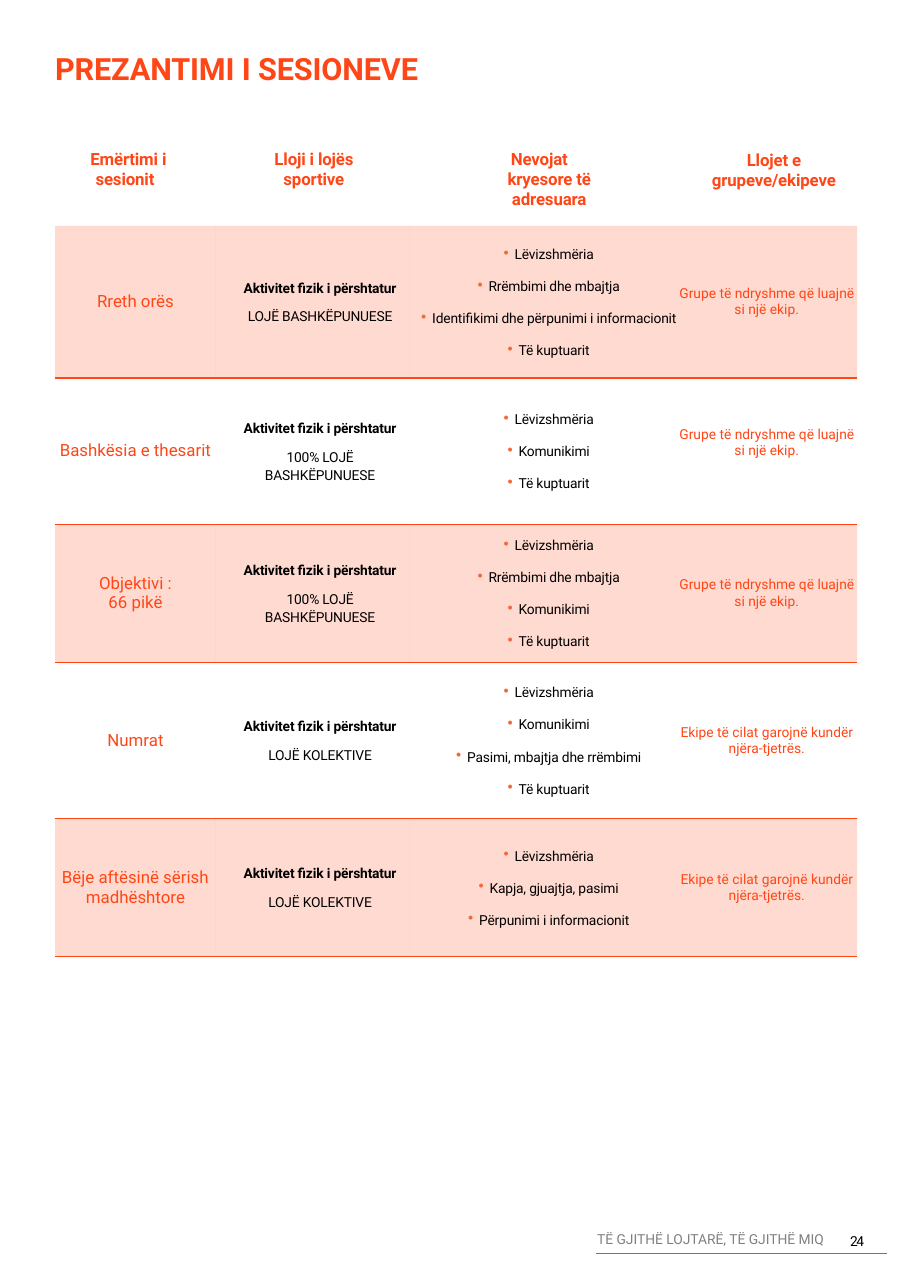
from lxml.etree import SubElement
from pptx import Presentation
from pptx.dml.color import RGBColor
from pptx.enum.shapes import MSO_CONNECTOR
from pptx.enum.text import MSO_ANCHOR, MSO_AUTO_SIZE, PP_ALIGN
from pptx.oxml import parse_xml
from pptx.oxml.ns import nsdecls, qn
from pptx.util import Inches, Pt

HEX = {"orange": "FF4616", "bullet": "F26A36", "rule": "FA4616",
       "gray": "808080", "black": "000000"}
NO_GRID = "{2D5ABB26-0587-4C30-8999-92F81FD0307C}"
MID, LEFT = PP_ALIGN.CENTER, PP_ALIGN.LEFT


def style(size, color, bold=False, align=MID, before=0, lines=None,
          indent=(0, 0), track=0, dot=False):
    """Gather format values; track is in hundredths of a point."""
    return {"color": color, "indent": indent, "track": track, "dot": dot,
            "font": {"name": "Roboto", "size": Pt(size), "bold": bold},
            "para": {"alignment": align, "space_before": Pt(before),
                     "line_spacing": lines}}


def header(*indent):
    return style(11, "orange", True, before=1, indent=indent, track=-10)


TITLE = style(20, "orange", True, LEFT, 1, track=-10)
NAME = style(11, "orange")
GROUP = style(9, "orange")
KIND = style(9, "black", True, MID, 7, 1.11, (0.13, 0), -10)
MODE = style(9, "black", False, MID, 7, 1.11, (0.13, 0), -10)
NEED = style(9, "black", False, MID, 9.2, 1.11, (0.2, -0.1), -10, True)
FOOT = style(9, "gray", align=LEFT, before=1.4)
PAGE = style(9, "black", track=-90)

HEADS = [
    ("Emërtimi i sesionit", (0.69, 1.34, 0.88, 0.38), header(0.01, 0.06)),
    ("Lloji i lojës sportive", (2.38, 1.34, 0.93, 0.38), header(0.01, 0)),
    ("Nevojat kryesore të adresuara", (4.33, 1.34, 1.12, 0.57),
     header(0.19, -0.18)),
    ("Llojet e grupeve/ekipeve", (6.42, 1.35, 1.21, 0.38), header(0, 0)),
]
WIDTHS = [1.46, 1.76, 2.42, 1.64]
HEIGHTS = [1.38, 1.33, 1.25, 1.42, 1.25]

ADAPTED = "Aktivitet fizik i përshtatur"
FULL = "100% LOJË BASHKËPUNUESE"
TEAM = "LOJË KOLEKTIVE"
MOVE, GRAB, TALK, GRASP = ("Lëvizshmëria", "Rrëmbimi dhe mbajtja",
                           "Komunikimi", "Të kuptuarit")
MIXED = "Grupe të ndryshme që luajnë si një ekip."
RIVAL = "Ekipe të cilat garojnë kundër njëra-tjetrës."
ROWS = [
    (["Rreth orës"], "LOJË BASHKËPUNUESE",
     [MOVE, GRAB, "Identifikimi dhe përpunimi i informacionit", GRASP], MIXED),
    (["Bashkësia e thesarit"], FULL, [MOVE, TALK, GRASP], MIXED),
    (["Objektivi :", "66 pikë"], FULL, [MOVE, GRAB, TALK, GRASP], MIXED),
    (["Numrat"], TEAM,
     [MOVE, TALK, "Pasimi, mbajtja dhe rrëmbimi", GRASP], RIVAL),
    (["Bëje aftësinë sërish madhështore"], TEAM,
     [MOVE, "Kapja, gjuajtja, pasimi", "Përpunimi i informacionit"], RIVAL),
]


def apply(item, values):
    for key, value in values.items():
        setattr(item, key, value)


def color(key):
    return RGBColor.from_string(HEX[key])


class Sheet:
    def __init__(self, slide):
        self.slide = slide

    def fill(self, frame, lines):
        """Fill a text frame with (text, style) paragraphs."""
        for i, (text, look) in enumerate(lines):
            para = frame.add_paragraph() if i else frame.paragraphs[0]
            run = para.add_run()
            run.text = text
            apply(para, look["para"])
            apply(run.font, look["font"])
            run.font.color.rgb = color(look["color"])
            run._r.get_or_add_rPr().set("spc", str(look["track"]))
            props = para._p.get_or_add_pPr()
            for key, size in zip(("marL", "indent"), look["indent"]):
                props.set(key, str(Inches(size)))
            if look["dot"]:
                tint = SubElement(props, qn("a:buClr"))
                SubElement(tint, qn("a:srgbClr"), val=HEX["bullet"])
                SubElement(props, qn("a:buSzPct"), val="111000")
                SubElement(props, qn("a:buChar"), char="•")

    def place(self, shape, text, box, look):
        for key, size in zip(("left", "top", "width", "height"), box):
            setattr(shape, key, Inches(size))
        apply(shape.text_frame, {
            "margin_left": 0, "margin_right": 0, "margin_bottom": 0,
            "margin_top": Inches(0.01), "word_wrap": True,
            "vertical_anchor": MSO_ANCHOR.TOP,
            "auto_size": MSO_AUTO_SIZE.SHAPE_TO_FIT_TEXT})
        self.fill(shape.text_frame, [(text, look)])

    def title(self, text, box):
        self.place(self.slide.shapes.title, text, box, TITLE)

    def label(self, text, box, look):
        self.place(self.slide.shapes.add_textbox(0, 0, 0, 0), text, box, look)

    def cell(self, cell, lines, shade):
        apply(cell, {"margin_left": 0, "margin_right": 0, "margin_top": 0,
                     "margin_bottom": 0, "vertical_anchor": MSO_ANCHOR.MIDDLE})
        self.fill(cell.text_frame, lines)
        props = cell._tc.get_or_add_tcPr()
        props.append(parse_xml(
            f'<a:lnB {nsdecls("a")} w="12700"><a:solidFill>'
            f'<a:srgbClr val="{HEX["orange"]}"/></a:solidFill></a:lnB>'))
        if shade:
            cell.fill.solid()
            cell.fill.fore_color.rgb = color("orange")
            tint = props.find(qn("a:solidFill") + "/" + qn("a:srgbClr"))
            SubElement(tint, qn("a:alpha"), val="20000")
        else:
            cell.fill.background()

    def table(self, left, top):
        grid = self.slide.shapes.add_table(
            len(ROWS), len(WIDTHS), Inches(left), Inches(top),
            Inches(sum(WIDTHS)), Inches(sum(HEIGHTS))).table
        apply(grid, {"first_row": False, "horz_banding": False})
        grid._tbl.tblPr.find(qn("a:tableStyleId")).text = NO_GRID
        for col, size in zip(grid.columns, WIDTHS):
            col.width = Inches(size)
        for i, (names, mode, needs, group) in enumerate(ROWS):
            grid.rows[i].height = Inches(HEIGHTS[i])
            parts = [[(name, NAME) for name in names],
                     [(ADAPTED, KIND), (mode, MODE)],
                     [(need, NEED) for need in needs],
                     [(group, GROUP)]]
            for j, lines in enumerate(parts):
                self.cell(grid.cell(i, j), lines, i % 2 == 0)
        return grid

    def line(self, left, right, top):
        rule = self.slide.shapes.add_connector(
            MSO_CONNECTOR.STRAIGHT, Inches(left), Inches(top),
            Inches(right), Inches(top))
        rule.line.color.rgb = color("rule")
        rule.line.width = Pt(0.75)
        SubElement(rule._element.spPr, qn("a:effectLst"))


def main():
    deck = Presentation()
    apply(deck, {"slide_width": Inches(8.26), "slide_height": Inches(11.69)})
    sheet = Sheet(deck.slides.add_slide(deck.slide_layouts[5]))
    sheet.title("PREZANTIMI I SESIONEVE", (0.5, 0.44, 4.13, 0.35))
    for text, box, look in HEADS:
        sheet.label(text, box, look)
    grid = sheet.table(0.5, 2.05)
    grid.cell(1, 3).margin_bottom = Inches(0.15)
    sheet.label("24", (7.5, 11.18, 0.56, 0.15), PAGE)
    sheet.line(5.41, 8.05, 11.38)
    sheet.label("TË GJITHË LOJTARË, TË GJITHË MIQ",
                (5.42, 11.16, 2.23, 0.34), FOOT)
    deck.save("out.pptx")


if __name__ == "__main__":
    main()
